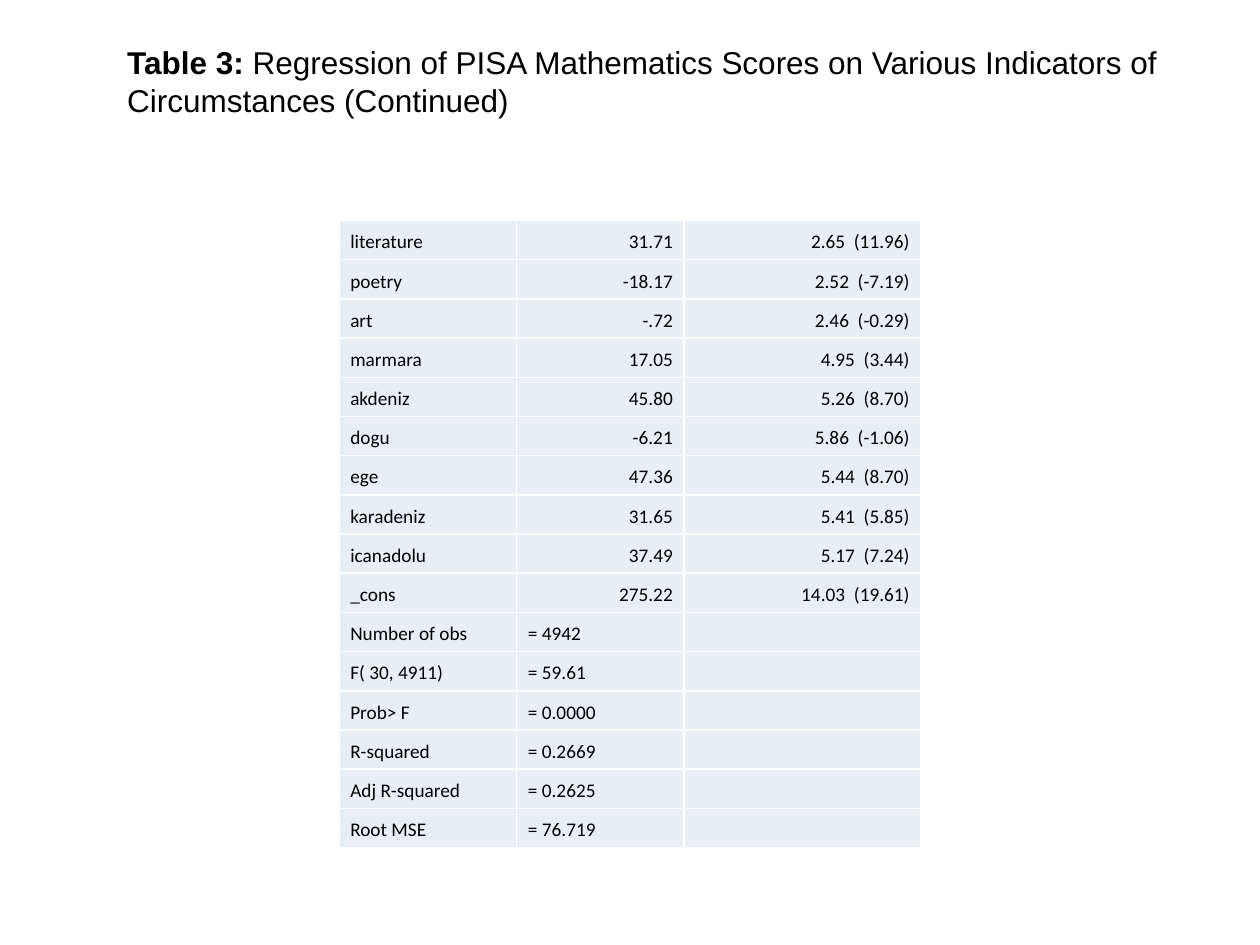
from lxml import etree
from pptx import Presentation
from pptx.dml.color import RGBColor
from pptx.enum.text import MSO_ANCHOR, MSO_AUTO_SIZE, PP_ALIGN
from pptx.oxml.ns import qn
from pptx.util import Inches, Pt

TOP, MIDDLE = MSO_ANCHOR.TOP, MSO_ANCHOR.MIDDLE
LEFT, RIGHT = PP_ALIGN.LEFT, PP_ALIGN.RIGHT
GROW = MSO_AUTO_SIZE.SHAPE_TO_FIT_TEXT
BLACK = RGBColor(0x00, 0x00, 0x00)
WHITE = RGBColor(0xFF, 0xFF, 0xFF)
PALE_BLUE = RGBColor(0xE9, 0xED, 0xF4)

COEFFICIENTS = [
    ("literature", "31.71", "2.65  (11.96)"),
    ("poetry", "-18.17", "2.52  (-7.19)"),
    ("art", "-.72", "2.46  (-0.29)"),
    ("marmara", "17.05", "4.95  (3.44)"),
    ("akdeniz", "45.80", "5.26  (8.70)"),
    ("dogu", "-6.21", "5.86  (-1.06)"),
    ("ege", "47.36", "5.44  (8.70)"),
    ("karadeniz", "31.65", "5.41  (5.85)"),
    ("icanadolu", "37.49", "5.17  (7.24)"),
    ("_cons", "275.22", "14.03  (19.61)"),
]
FIT_STATISTICS = [
    ("Number of obs", "= 4942", ""),
    ("F( 30, 4911)", "= 59.61", ""),
    ("Prob> F", "= 0.0000", ""),
    ("R-squared", "= 0.2669", ""),
    ("Adj R-squared", "= 0.2625", ""),
    ("Root MSE", "= 76.719", ""),
]


class SlideBuilder:
    title_font, title_size = "Arial", Pt(18)
    table_font, table_size = "Calibri", Pt(11)
    line_spacing = 1.15
    border_width = Pt(1)

    def __init__(self, slide):
        self.slide = slide

    def add_run(self, paragraph, text, font, size, bold=False):
        run = paragraph.add_run()
        run.text = text
        run.font.name = font
        run.font.size = size
        run.font.bold = bold
        run.font.color.rgb = BLACK

    def title(self, runs, left, top, width, height):
        shape = self.slide.shapes.title
        shape.left, shape.top, shape.width, shape.height = left, top, width, height
        frame = shape.text_frame
        frame.word_wrap = True
        frame.auto_size = GROW
        frame.vertical_anchor = TOP
        paragraph = frame.paragraphs[0]
        paragraph.alignment = LEFT
        for text, bold in runs:
            self.add_run(paragraph, text, self.title_font, self.title_size, bold)

    def border(self, cell):
        properties = cell._tc.get_or_add_tcPr()
        for position, side in enumerate(("lnL", "lnR", "lnT", "lnB")):
            line = etree.Element(qn(f"a:{side}"), w=str(self.border_width))
            fill = etree.SubElement(line, qn("a:solidFill"))
            etree.SubElement(fill, qn("a:srgbClr"), val=str(WHITE))
            properties.insert(position, line)

    def cell(self, cell, text, alignment):
        cell.fill.solid()
        cell.fill.fore_color.rgb = PALE_BLUE
        self.border(cell)
        cell.vertical_anchor = MIDDLE
        cell.margin_left = cell.margin_right = Inches(0.09)
        cell.margin_top = cell.margin_bottom = Inches(0.05)
        paragraph = cell.text_frame.paragraphs[0]
        paragraph.alignment = alignment
        paragraph.line_spacing = self.line_spacing
        if text:
            self.add_run(paragraph, text, self.table_font, self.table_size)
        else:
            size = str(int(self.table_size.pt * 100))
            etree.SubElement(paragraph._p, qn("a:endParaRPr"), sz=size)

    def table(self, rows, column_widths, left, top, height):
        shape = self.slide.shapes.add_table(
            len(rows), len(column_widths), left, top, sum(column_widths), height)
        table = shape.table
        table.first_row = False
        table.horz_banding = False
        for column, width in zip(table.columns, column_widths):
            column.width = width
        for row_index, (texts, alignments) in enumerate(rows):
            for column_index, (text, alignment) in enumerate(zip(texts, alignments)):
                self.cell(table.cell(row_index, column_index), text, alignment)


def main():
    presentation = Presentation()
    presentation.slide_width = Inches(10)
    presentation.slide_height = Inches(7.5)
    slide = presentation.slides.add_slide(presentation.slide_layouts[5])
    builder = SlideBuilder(slide)
    rows = [(texts, (LEFT, RIGHT, RIGHT)) for texts in COEFFICIENTS]
    rows += [(texts, (LEFT, LEFT, LEFT)) for texts in FIT_STATISTICS]
    builder.table(rows, [Inches(1.41), Inches(1.33), Inches(1.88)],
                  Inches(2.69), Inches(1.75), Inches(4.95))
    builder.title(
        [("Table 3:", True),
         (" Regression of PISA Mathematics Scores on Various Indicators of "
          "Circumstances (Continued)", False)],
        Inches(0.91), Inches(0.29), Inches(8.74), Inches(0.71))
    presentation.save("out.pptx")


if __name__ == "__main__":
    main()
